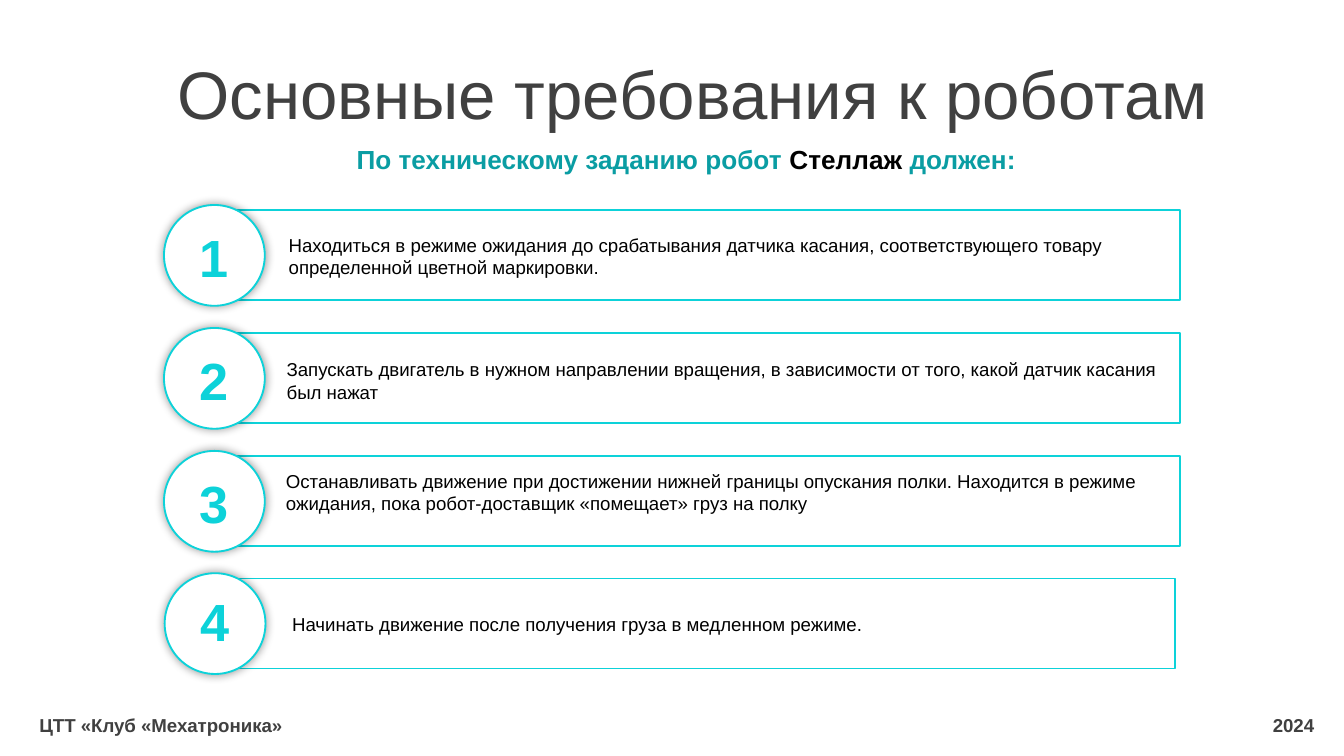
from lxml import etree
from pptx import Presentation
from pptx import util as u
from pptx.dml.color import RGBColor
from pptx.enum import shapes, text
from pptx.oxml import ns

PX = 4572  # EMU per px, 200 px to the inch
FONT = "Arial"
COLORS = {
    "cyan": "0DD2D9",
    "teal": "0A9DA3",
    "grey": "404040",
    "black": "000000",
    "white": "FFFFFF",
}
FIRST_TOP, ROW_STEP = 313, 182.8

# Left shift of frame and circle, number offset, text box (left, top, width, height), lines
REQUIREMENTS = [
    (0, 0, 12, (410, 338, 1314, 88),
     ["Находиться в режиме ожидания до срабатывания датчика касания, соответствующего товару",
      "определенной цветной маркировки."]),
    (0, 0, 12, (407, 523, 1348, 88),
     ["Запускать двигатель в нужном направлении вращения, в зависимости от того, "
      "какой датчик касания был нажат"]),
    (0, 0, 12, (406, 689, 1314, 88),
     ["Останавливать движение при достижении нижней границы опускания полки. "
      "Находится в режиме ожидания, пока робот-доставщик «помещает» груз на полку"]),
    (-7, 1, 6, (415, 902, 1304, 54),
     ["Начинать движение после получения груза в медленном режиме."]),
]


def color(name):
    return RGBColor.from_string(COLORS[name])


def emu(box):
    return [u.Emu(length * PX) for length in box]


def set_font(font, size, name, bold=False):
    font.name = FONT
    font.size = u.Pt(size)
    font.bold = bold
    font.color.rgb = color(name)


def add_text(slide, box, lines, size, name, bold=False, align=text.PP_ALIGN.LEFT,
             anchor=text.MSO_ANCHOR.TOP):
    shape = slide.shapes.add_textbox(*emu(box))
    frame = shape.text_frame
    frame.word_wrap = True
    frame.vertical_anchor = anchor
    frame.text = "\n".join(lines)
    for paragraph in frame.paragraphs:
        paragraph.alignment = align
        set_font(paragraph.font, size, name, bold)
    return shape


def add_outline(slide, kind, box):
    shape = slide.shapes.add_shape(kind, *emu(box))
    shape.shadow.inherit = False
    shape.fill.background()
    shape.line.color.rgb = color("cyan")
    shape.line.width = u.Pt(1)
    return shape


def add_glow_shadow(shape):
    effects = shape.element.spPr.find(ns.qn("a:effectLst"))
    shadow = etree.SubElement(effects, ns.qn("a:outerShdw"), blurRad=str(u.Pt(5)),
                              dist="0", dir="0", algn="ctr", rotWithShape="0")
    tint = etree.SubElement(shadow, ns.qn("a:srgbClr"), val=COLORS["black"])
    etree.SubElement(tint, ns.qn("a:alpha"), val="40000")


def add_title(slide, title):
    shape = slide.shapes.title
    shape.left, shape.top, shape.width, shape.height = emu((244, 75, 1756, 126))
    frame = shape.text_frame
    frame.text = title
    frame.auto_size = text.MSO_AUTO_SIZE.NONE
    frame.vertical_anchor = text.MSO_ANCHOR.MIDDLE
    paragraph = frame.paragraphs[0]
    paragraph.alignment = text.PP_ALIGN.LEFT
    set_font(paragraph.font, 36, "grey")


def add_subtitle(slide):
    shape = add_text(slide, (393, 202, 1256, 68), [""], 14, "teal", True,
                     text.PP_ALIGN.CENTER, text.MSO_ANCHOR.MIDDLE)
    paragraph = shape.text_frame.paragraphs[0]
    for words, name in [("По техническому заданию робот ", "teal"),
                        ("Стеллаж", "black"), (" должен:", "teal")]:
        run = paragraph.add_run()
        run.text = words
        run.font.color.rgb = color(name)


def add_requirement(slide, index, frame_shift, circle_shift, number_offset, text_box, lines):
    top = round(FIRST_TOP + index * ROW_STEP)
    add_outline(slide, shapes.MSO_SHAPE.RECTANGLE, (318 + frame_shift, top, 1438, 134))
    add_text(slide, text_box, lines, 10, "black")
    circle = add_outline(slide, shapes.MSO_SHAPE.OVAL, (244 + circle_shift, top - 8, 150, 150))
    circle.fill.solid()
    circle.fill.fore_color.rgb = color("white")
    add_glow_shadow(circle)
    add_text(slide, (272 + circle_shift, top + number_offset, 94, 114), [str(index + 1)],
             28, "cyan", True, text.PP_ALIGN.CENTER, text.MSO_ANCHOR.MIDDLE)


def add_footer(slide, left_text, right_text):
    shape = slide.shapes.add_textbox(*emu((39, 1052, 1940, 54)))
    shape.text_frame.word_wrap = True
    paragraph = shape.text_frame.paragraphs[0]
    paragraph.text = f"{left_text}\t{right_text}"
    # Right-aligned tab stop for the year
    tabs = etree.SubElement(paragraph._p.get_or_add_pPr(), ns.qn("a:tabLst"))
    etree.SubElement(tabs, ns.qn("a:tab"), pos=str(1897 * PX), algn="r")
    set_font(paragraph.font, 10, "grey", True)


def main():
    presentation = Presentation()
    presentation.slide_width, presentation.slide_height = emu((2000, 1125))
    slide = presentation.slides.add_slide(presentation.slide_layouts[5])

    # Heading
    add_title(slide, "Основные требования к роботам")
    add_subtitle(slide)

    # Numbered requirements
    for index, requirement in enumerate(REQUIREMENTS):
        add_requirement(slide, index, *requirement)

    # Footer
    add_footer(slide, "ЦТТ «Клуб «Мехатроника»", "2024")
    presentation.save("out.pptx")


if __name__ == "__main__":
    main()
